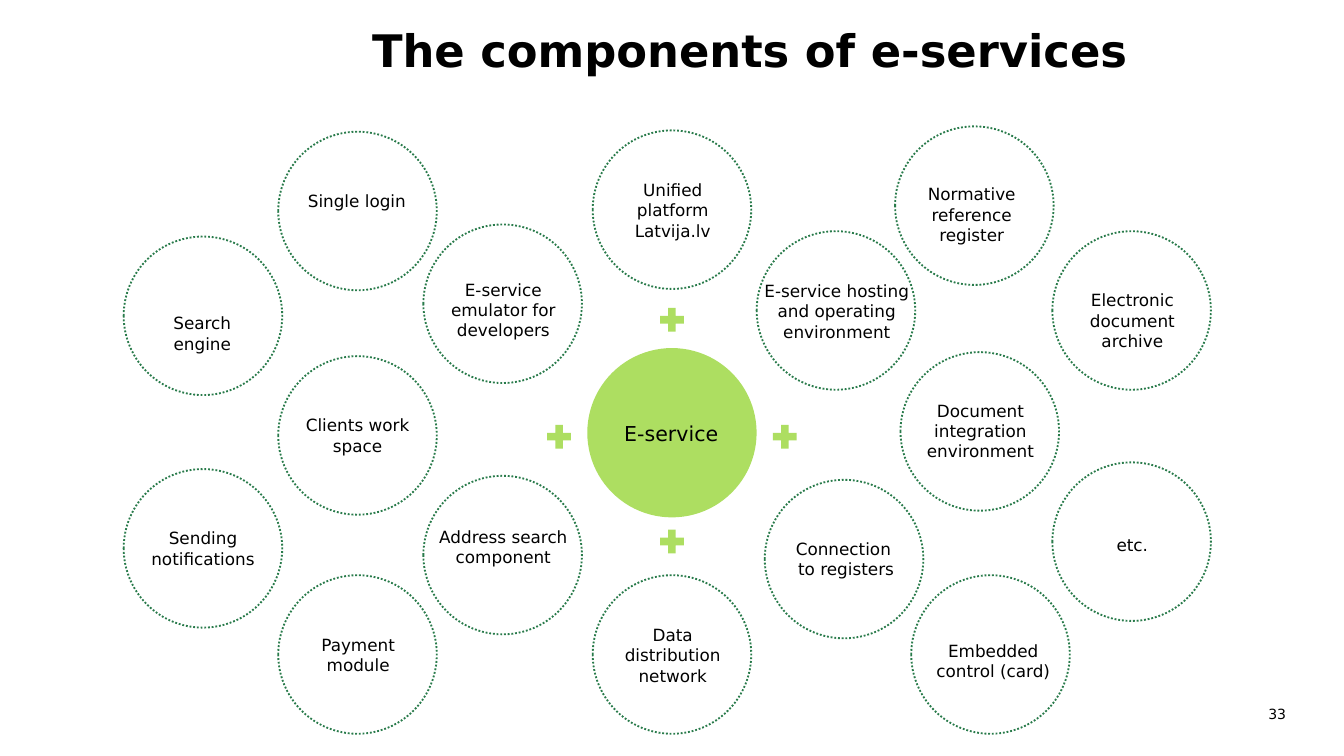
from dataclasses import dataclass

from pptx import Presentation
from pptx.dml.color import RGBColor
from pptx.enum.dml import MSO_LINE
from pptx.enum.shapes import MSO_SHAPE
from pptx.enum.text import MSO_ANCHOR, PP_ALIGN
from pptx.util import Inches, Pt

FONT = "DejaVu Sans"
BLACK = RGBColor(0x00, 0x00, 0x00)
GREEN = RGBColor(0x29, 0x7B, 0x4B)
LIME = RGBColor(0xAD, 0xDE, 0x61)

CIRCLE_SIZE = 1.18
HUB_SIZE = 1.26
PLUS_SIZE = 0.24
LINE_HEIGHT = 0.15


@dataclass
class Component:
    """Circle position, and the label's offset, width and lines inside it."""
    text: str
    left: float
    top: float
    label_left: float
    label_top: float
    label_width: float
    lines: int
    inset: float = 0.05


COMPONENTS = [
    Component("Payment module", 2.07, 4.28, 0.18, 0.44, 0.83, 2, 0),
    Component("Connection\n to registers", 5.69, 3.57, 0.10, 0.39, 0.97, 2),
    Component("Single login", 2.07, 0.98, 0.10, 0.39, 0.97, 1),
    Component("Unified platform\nLatvija.lv", 4.41, 0.97, 0.24, 0.32, 0.71, 3),
    Component("Embedded control (card)", 6.78, 4.28, 0.09, 0.44, 1.04, 2),
    Component("Data distribution network", 4.41, 4.28, 0.17, 0.32, 0.85, 3),
    Component("Document integration environment", 6.70, 2.62, 0.18, 0.31, 0.83, 3),
    Component("E-service hosting and operating environment",
              5.63, 1.72, 0, 0.37, 1.19, 3, 0),
    Component("Clients work space", 2.07, 2.65, 0.03, 0.39, 1.12, 2),
    Component("Electronic document archive", 7.83, 1.72, 0.06, 0.39, 1.07, 4),
    Component("Normative reference register", 6.66, 0.94, 0.12, 0.38, 0.90, 3),
    Component("Sending notifications", 0.92, 3.49, 0.08, 0.44, 1.02, 2, 0),
    Component("E-service emulator for developers", 3.15, 1.67, 0.06, 0.36, 1.07, 3),
    Component("Address search component", 3.15, 3.54, 0.06, 0.33, 1.07, 2),
    Component("Search engine", 0.92, 1.76, 0.17, 0.57, 0.83, 2, 0),
    Component("etc.", 7.83, 3.44, 0.06, 0.49, 1.07, 1),
]


def add_text(shapes, text, left, top, width, height, size=9, bold=False,
             align=PP_ALIGN.CENTER, anchor=MSO_ANCHOR.TOP,
             inset_x=0, inset_y=0, wrap=True):
    box = shapes.add_textbox(Inches(left), Inches(top), Inches(width), Inches(height))
    frame = box.text_frame
    frame.word_wrap = wrap
    frame.vertical_anchor = anchor
    frame.margin_left = frame.margin_right = Inches(inset_x)
    frame.margin_top = frame.margin_bottom = Inches(inset_y)
    frame.text = text
    for paragraph in frame.paragraphs:
        paragraph.alignment = align
        font = paragraph.font
        font.name, font.size, font.bold = FONT, Pt(size), bold
        font.color.rgb = BLACK


def add_square_shape(shapes, kind, left, top, size, fill=None):
    """Add a shape as wide as high: filled, or else with a dotted outline."""
    shape = shapes.add_shape(kind, Inches(left), Inches(top), Inches(size), Inches(size))
    shape.shadow.inherit = False
    if fill is None:
        shape.fill.background()
        shape.line.color.rgb = GREEN
        shape.line.width = Pt(1)
        shape.line.dash_style = MSO_LINE.ROUND_DOT
    else:
        shape.fill.solid()
        shape.fill.fore_color.rgb = fill
        shape.line.fill.background()


def add_component(slide, component):
    shapes = slide.shapes.add_group_shape().shapes
    add_square_shape(shapes, MSO_SHAPE.FLOWCHART_CONNECTOR,
                     component.left, component.top, CIRCLE_SIZE)
    add_text(shapes, component.text,
             component.left + component.label_left,
             component.top + component.label_top,
             component.label_width,
             component.lines * LINE_HEIGHT + 2 * component.inset,
             inset_y=component.inset)


def add_hub(slide, left, top):
    """Add the central circle with a plus sign on each of its four sides."""
    shapes = slide.shapes.add_group_shape().shapes
    add_square_shape(shapes, MSO_SHAPE.FLOWCHART_CONNECTOR, left, top, HUB_SIZE, LIME)
    add_text(shapes, "E-service", left + 0.27, top + 0.54, 0.71, 0.19,
             size=11, anchor=MSO_ANCHOR.MIDDLE, wrap=False)
    middle = (HUB_SIZE - PLUS_SIZE) / 2
    for plus_left, plus_top in [(middle, -0.33), (middle, 1.32),
                                (1.35, 0.54), (-0.33, 0.54)]:
        add_square_shape(shapes, MSO_SHAPE.MATH_PLUS, left + plus_left,
                         top + plus_top, PLUS_SIZE, LIME)


def main():
    presentation = Presentation()
    presentation.slide_width = Inches(10)
    presentation.slide_height = presentation.slide_width * 9 // 16
    slide = presentation.slides.add_slide(presentation.slide_layouts[6])

    add_text(slide.shapes, "The components of e-services", 2.67, 0.12, 6.67, 0.85,
             size=24, bold=True, align=PP_ALIGN.LEFT, inset_x=0.1, inset_y=0.05)
    for component in COMPONENTS:
        add_component(slide, component)
    add_hub(slide, 4.37, 2.59)
    add_text(slide.shapes, "33", 9.31, 5.19, 0.35, 0.25, size=7.5,
             align=PP_ALIGN.RIGHT, anchor=MSO_ANCHOR.MIDDLE, inset_x=0.09, inset_y=0.05)
    presentation.save("out.pptx")


if __name__ == "__main__":
    main()
